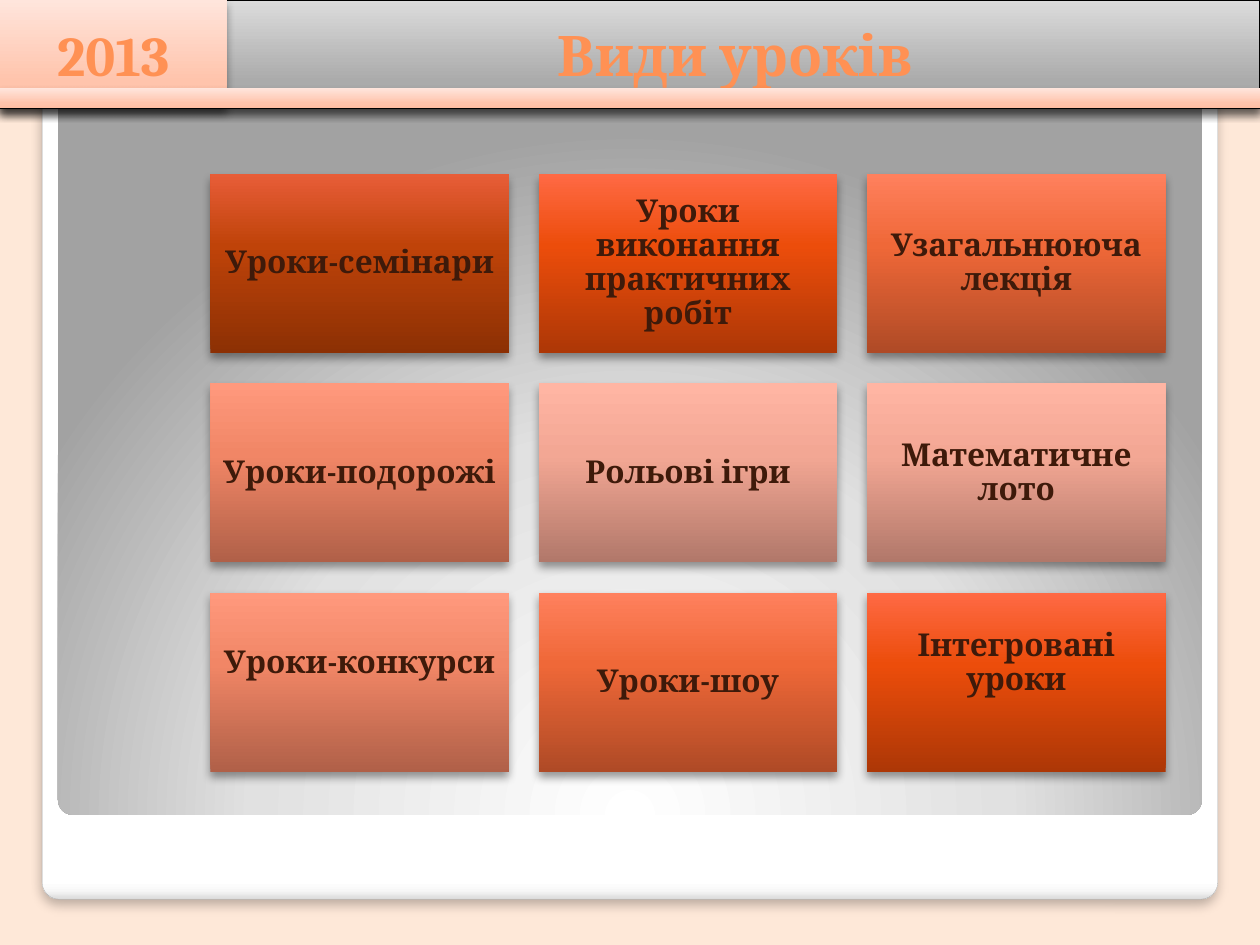
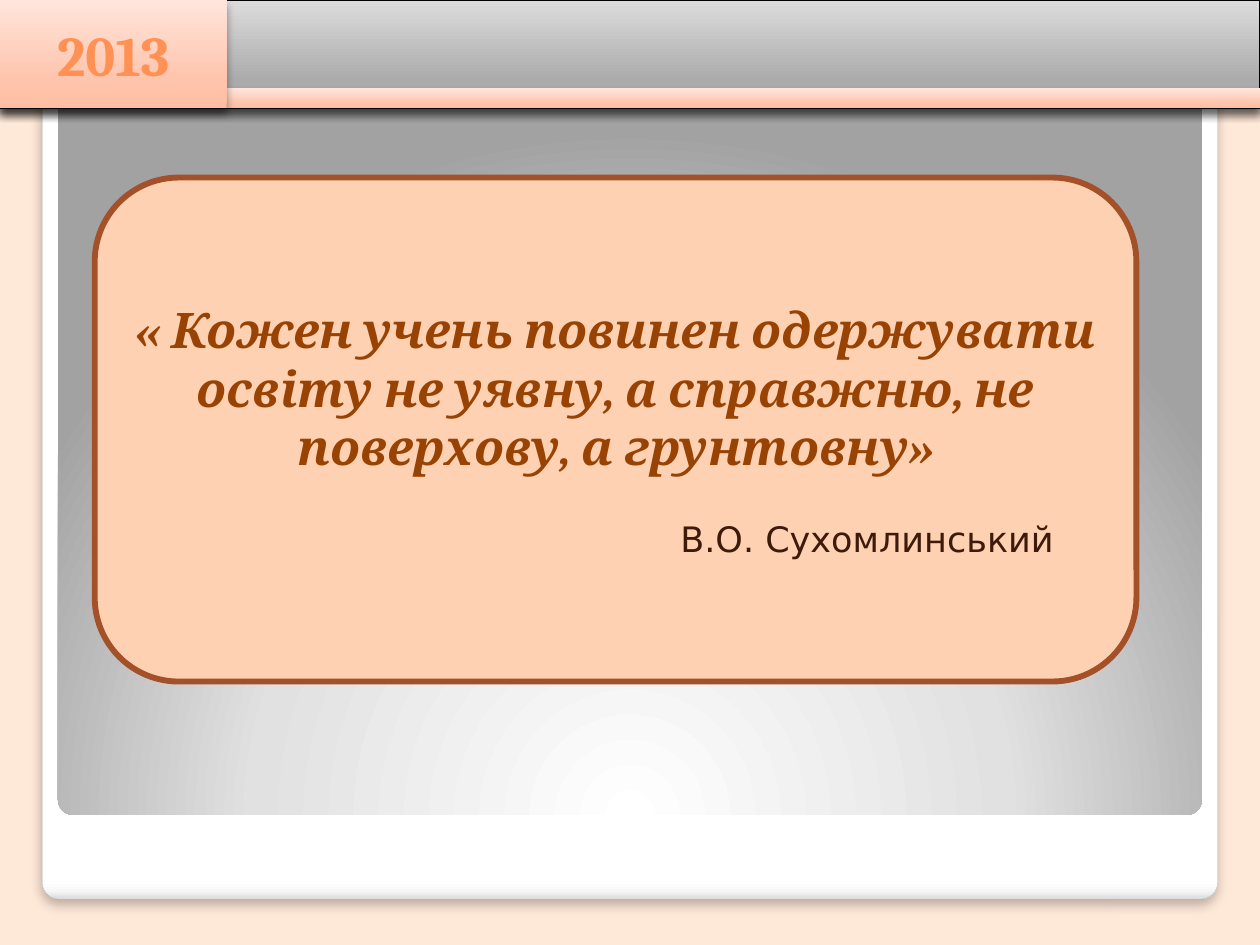
from pptx import Presentation
from pptx.dml.color import RGBColor
from pptx.enum.shapes import MSO_SHAPE
from pptx.enum.text import MSO_ANCHOR, PP_ALIGN
from pptx.oxml import parse_xml
from pptx.oxml.ns import nsdecls, qn
from pptx.util import Cm, Pt

RECT = MSO_SHAPE.RECTANGLE
ROUND = MSO_SHAPE.ROUNDED_RECTANGLE
MID = MSO_ANCHOR.MIDDLE
LEFT, CENTER = PP_ALIGN.LEFT, PP_ALIGN.CENTER

HEX = {
    "back": "FEE8D8", "black": "000000", "edge": "A4A4A4",
    "title": "FF9154", "dark": "3E1A0A", "quote": "984204",
    "card": "FDD1B1", "rim": "A45028",
}
UP, DOWN = '<a:lin ang="16200000" scaled="0"/>', '<a:lin ang="5400000" scaled="0"/>'
GLOW = ('<a:path path="circle"><a:fillToRect l="50000" t="175000" '
        'r="50000" b="-75000"/></a:path>')
FADES = {
    "frame": (DOWN, {0: "FFFFFF", 98: "FFFFFF", 99: "F7F7F7", 100: "DADADA"}),
    "panel": (GLOW, {0: "FFFFFF", 55: "E1E1E1", 100: "A2A2A2"}),
    "gray": (UP, {0: "A2A2A2", 25: "ABABAB", 100: "DCDCDC"}),
    "peach": (UP, {0: "FFBEA3", 25: "FFC4AC", 100: "FFE5DC"}),
    "rust": (UP, {0: "8C3004", 60: "BF4309", 100: "E85D38"}),
    "red": (UP, {0: "AD3706", 60: "EC4D0B", 100: "FF6944"}),
    "orange": (UP, {0: "AF4A26", 60: "EF6838", 100: "FF805D"}),
    "salmon": (UP, {0: "B06048", 60: "F18666", 100: "FF997D"}),
    "pink": (UP, {0: "B1786A", 60: "F3A794", 100: "FFB5A3"}),
}
SOFT, HARD = (25, 6, 4), (40, 5.2, 3)
HEAD = {"name": "Cambria", "size": Pt(32), "bold": True}
LABEL = {"name": "Cambria", "size": Pt(18), "bold": True}
QUOTE = {"name": "Cambria", "size": Pt(28), "bold": True, "italic": True}
NAME = {"name": "DejaVu Sans", "size": Pt(20), "bold": False, "italic": False}


def box(slide, kind, at, fill, line=None, shade=None):
    shape = slide.shapes.add_shape(kind, *[Cm(n) for n in at])
    props = shape._element.spPr
    if fill in FADES:
        course, stops = FADES[fill]
        marks = "".join(f'<a:gs pos="{pos * 1000}"><a:srgbClr val="{tone}"/></a:gs>'
                        for pos, tone in stops.items())
        shape.fill.background()
        props.replace(props.find(qn("a:noFill")), parse_xml(
            f'<a:gradFill {nsdecls("a")} rotWithShape="1">'
            f'<a:gsLst>{marks}</a:gsLst>{course}</a:gradFill>'))
    else:
        shape.fill.solid()
        shape.fill.fore_color.rgb = RGBColor.from_string(HEX[fill])
    if line:
        shape.line.color.rgb = RGBColor.from_string(HEX[line[0]])
        shape.line.width = Pt(line[1])
    else:
        shape.line.fill.background()
    shape.shadow.inherit = False
    if shade:
        alpha, blur, dist = shade
        props.find(qn("a:effectLst")).append(parse_xml(
            f'<a:outerShdw {nsdecls("a")} blurRad="{Pt(blur)}" dist="{Pt(dist)}" '
            f'dir="5400000" rotWithShape="0"><a:srgbClr val="{HEX["black"]}">'
            f'<a:alpha val="{alpha * 1000}"/></a:srgbClr></a:outerShdw>'))
    return shape


def write(para, text, style, tone, align=CENTER):
    para.alignment = align
    run = para.add_run()
    run.text = text
    for key, value in style.items():
        setattr(run.font, key, value)
    run.font.color.rgb = RGBColor.from_string(HEX[tone])


deck = Presentation()
deck.slide_width, deck.slide_height = Cm(25.4), Cm(19.05)
BANDS = {
    "year": ((0, 0, 4.57, 2.18), "peach"),
    "strip": ((0, 1.78, 25.4, 0.4), "peach"),
}
PAGES = [("Види уроків", ["year", "strip"]), ("", ["strip", "year"])]

for title, order in PAGES:
    slide = deck.slides.add_slide(deck.slide_layouts[6])
    slide.background.fill.solid()
    slide.background.fill.fore_color.rgb = RGBColor.from_string(HEX["back"])
    frame = box(slide, ROUND, (0.85, 0.91, 23.7, 17.22), "frame", ("edge", 0.16), SOFT)
    panel = box(slide, ROUND, (1.17, 1.19, 23.06, 15.24), "panel")
    for shape in (frame, panel):
        shape.adjustments[0] = 0.02
    top = box(slide, RECT, (0, 0, 25.4, 2.18), "gray", ("black", 0.75), HARD)
    if title:
        top.text_frame.margin_left = Cm(4.5)
        top.text_frame.vertical_anchor = MID
        write(top.text_frame.paragraphs[0], title, HEAD, "title")
    for band in order:
        at, fill = BANDS[band]
        shape = box(slide, RECT, at, fill, shade=HARD)
        if band == "year":
            shape.text_frame.vertical_anchor = MID
            write(shape.text_frame.paragraphs[0], "2013", HEAD, "title")

first, last = deck.slides

TILES = [
    ("Уроки-семінари", "rust", 0),
    ("Уроки виконання практичних робіт", "red", 0),
    ("Узагальнююча лекція", "orange", 0),
    ("Уроки-подорожі", "salmon", 0),
    ("Рольові ігри", "pink", 0),
    ("Математичне лото", "pink", 0),
    ("Уроки-конкурси", "salmon", 0.76),
    ("Уроки-шоу", "orange", 0),
    ("Інтегровані уроки", "red", 0.76),
]
for num, (text, fill, lift) in enumerate(TILES):
    row, col = divmod(num, 3)
    at = (4.24 + 6.62 * col, 3.51 + 4.22 * row, 6.02, 3.61)
    frame = box(first, RECT, at, fill, shade=HARD).text_frame
    pad = Cm(0.18)
    form = {"word_wrap": True, "vertical_anchor": MID, "margin_left": pad,
            "margin_right": pad, "margin_top": pad, "margin_bottom": pad + Cm(lift)}
    for key, value in form.items():
        setattr(frame, key, value)
    para = frame.paragraphs[0]
    para.line_spacing = 0.9
    write(para, text, LABEL, "dark")

card = box(last, ROUND, (1.91, 3.58, 21, 10.16), "card", ("rim", 3.35))
frame = card.text_frame
frame.word_wrap = True
frame.vertical_anchor = MID
write(frame.paragraphs[0], "« Кожен учень повинен одержувати освіту не уявну, "
      "а справжню, не поверхову, а грунтовну»", QUOTE, "quote")
para = frame.add_paragraph()
para.space_before = Pt(24)
write(para, "В.О. Сухомлинський", NAME, "dark", LEFT)
para._p.get_or_add_pPr().set("marL", str(Cm(11.06)))

deck.save("out.pptx")
